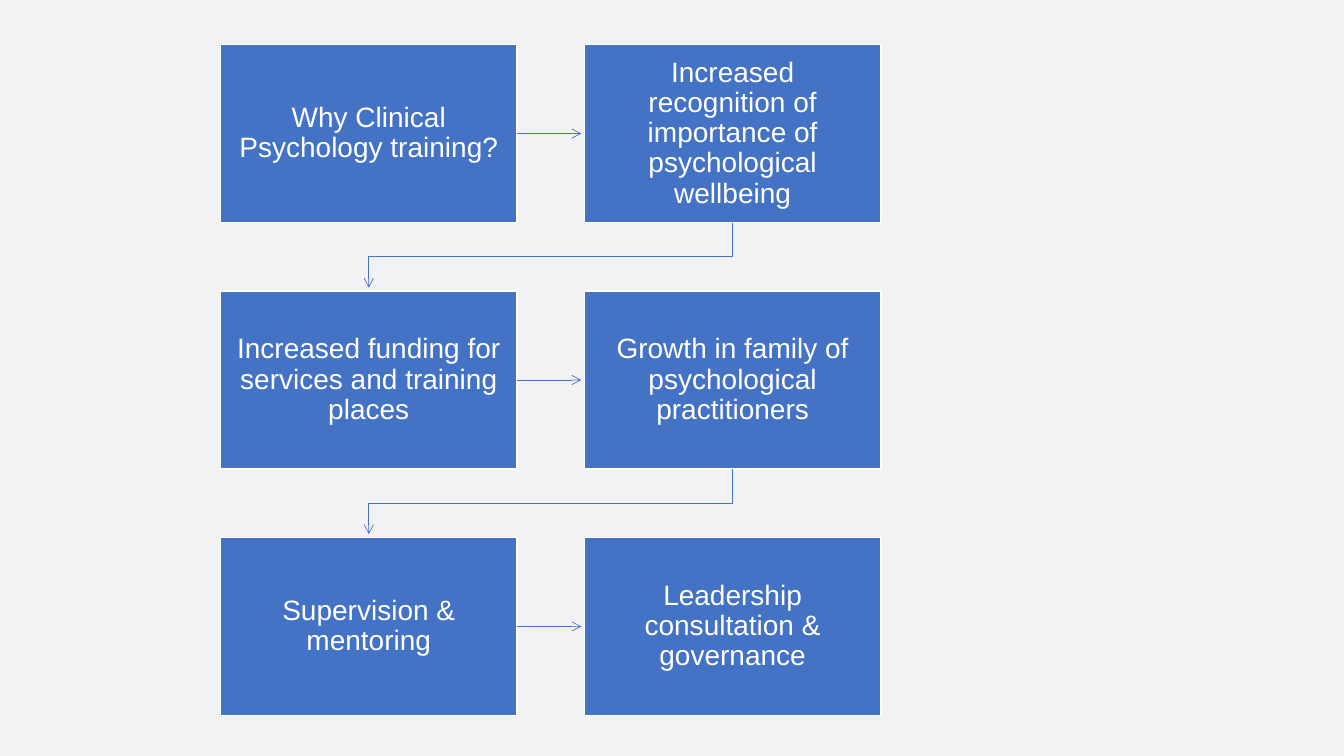
from lxml import etree
from pptx import Presentation
from pptx import util as u
from pptx.dml.color import RGBColor
from pptx.enum import shapes, text
from pptx.oxml.ns import qn

BACKGROUND = RGBColor(0xF2, 0xF2, 0xF2)
BLUE = RGBColor(0x44, 0x72, 0xC4)
WHITE = RGBColor(0xFF, 0xFF, 0xFF)

LEFT, TOP = u.Cm(5.56), u.Cm(1.12)
STEP_WIDTH, STEP_HEIGHT = u.Cm(7.47), u.Cm(4.49)
COLUMN_PITCH, ROW_PITCH = u.Cm(9.17), u.Cm(6.21)
ARROW_GAP = u.Cm(0.08)
BEND_DROP = u.Cm(0.86)

STEPS = [
    ("Why Clinical Psychology training?",
     "Increased recognition of importance of psychological wellbeing"),
    ("Increased funding for services and training places",
     "Growth in family of psychological practitioners"),
    ("Supervision & mentoring",
     "Leadership consultation & governance"),
]


def write_text(frame, wording, size=20, font="Arial", color=WHITE, spacing=0.9):
    frame.word_wrap = True
    frame.vertical_anchor = text.MSO_ANCHOR.MIDDLE
    frame.margin_left = frame.margin_right = u.Cm(0.36)
    frame.margin_top = frame.margin_bottom = u.Cm(0.38)
    paragraph = frame.paragraphs[0]
    paragraph.alignment = text.PP_ALIGN.CENTER
    paragraph.line_spacing = spacing
    run = paragraph.add_run()
    run.text = wording
    run.font.size = u.Pt(size)
    run.font.name = font
    run.font.color.rgb = color


def add_step(slide, left, top, wording):
    step = slide.shapes.add_shape(
        shapes.MSO_SHAPE.RECTANGLE, left, top, STEP_WIDTH, STEP_HEIGHT)
    step.shadow.inherit = False
    step.fill.solid()
    step.fill.fore_color.rgb = BLUE
    step.line.color.rgb = WHITE
    step.line.width = u.Pt(1)
    write_text(step.text_frame, wording)


def style_arrow(arrow):
    arrow.line.color.rgb = BLUE
    arrow.line.width = u.Pt(0.5)
    outline = arrow.element.spPr.find(qn("a:ln"))
    etree.SubElement(outline, qn("a:tailEnd"), type="arrow")


def add_row_arrow(slide, left, top):
    middle = top + STEP_HEIGHT // 2
    arrow = slide.shapes.add_connector(
        shapes.MSO_CONNECTOR.STRAIGHT, left + STEP_WIDTH, middle,
        left + COLUMN_PITCH - ARROW_GAP, middle)
    style_arrow(arrow)
    etree.SubElement(arrow.element.spPr, qn("a:effectLst"))


def add_return_arrow(slide, left, top):
    target = left + STEP_WIDTH // 2
    source = target + COLUMN_PITCH
    bottom = top + STEP_HEIGHT
    bend = bottom + BEND_DROP
    outline = slide.shapes.build_freeform(source, bottom)
    outline.add_line_segments(
        [(source, bend), (target, bend), (target, top + ROW_PITCH - ARROW_GAP)],
        close=False)
    arrow = outline.convert_to_shape()
    arrow.shadow.inherit = False
    arrow.fill.background()
    style_arrow(arrow)


def main():
    deck = Presentation()
    deck.slide_width, deck.slide_height = u.Cm(33.87), u.Cm(19.05)
    slide = deck.slides.add_slide(deck.slide_layouts[6])
    slide.background.fill.solid()
    slide.background.fill.fore_color.rgb = BACKGROUND
    for row, pair in enumerate(STEPS):
        top = TOP + row * ROW_PITCH
        for column, wording in enumerate(pair):
            add_step(slide, LEFT + column * COLUMN_PITCH, top, wording)
        add_row_arrow(slide, LEFT, top)
        if row < len(STEPS) - 1:
            add_return_arrow(slide, LEFT, top)
    deck.save("out.pptx")


if __name__ == "__main__":
    main()
